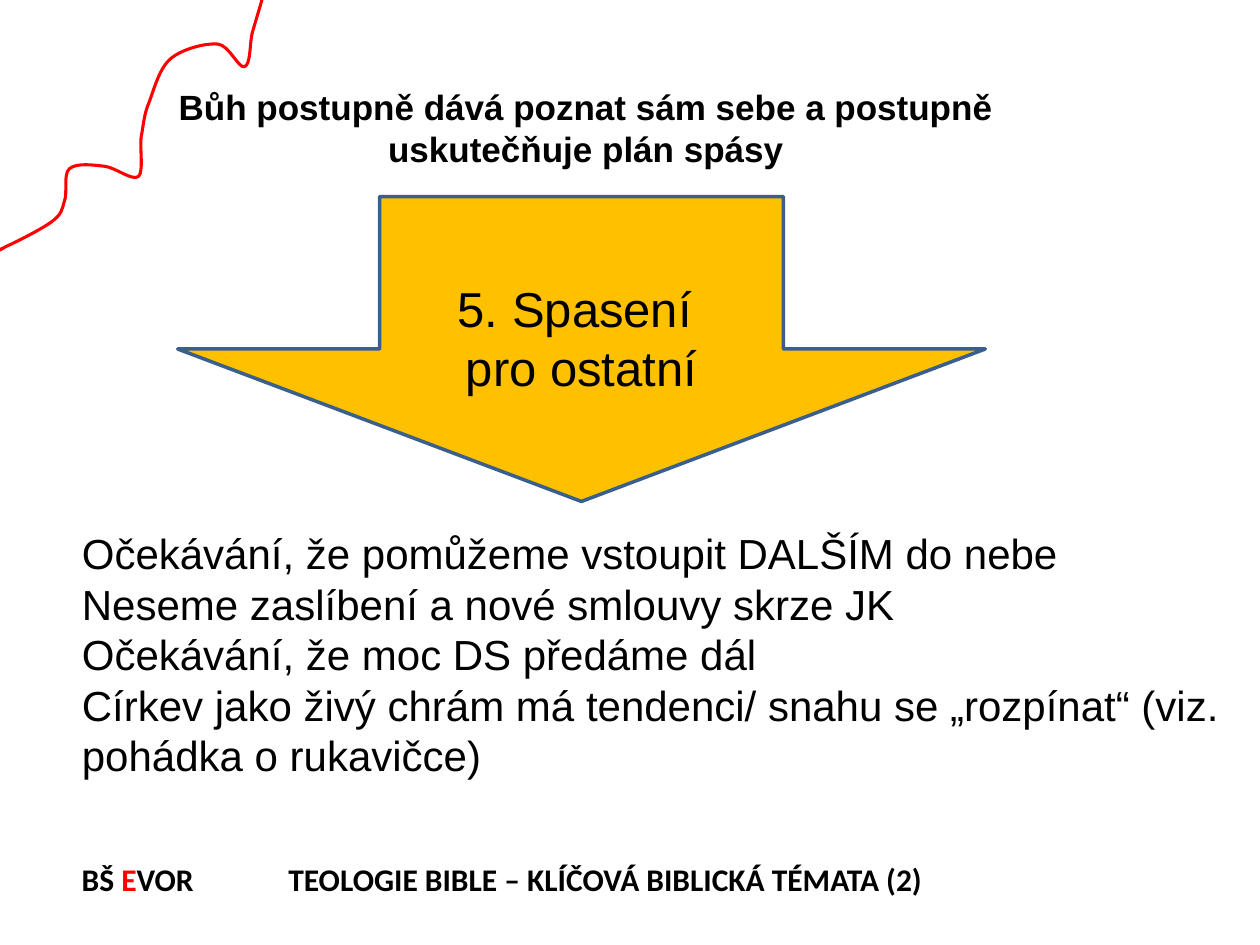
from lxml.etree import SubElement
from pptx import Presentation
from pptx.dml.color import RGBColor
from pptx.enum.shapes import MSO_SHAPE
from pptx.enum.text import MSO_ANCHOR, MSO_AUTO_SIZE, PP_ALIGN
from pptx.oxml.ns import qn
from pptx.util import Inches, Pt

BLACK = RGBColor(0, 0, 0)
RED = RGBColor(255, 0, 0)
GOLD = RGBColor(0xFF, 0xC0, 0x00)
BLUE = RGBColor(0x3A, 0x5F, 0x8C)

TITLE = "Bůh postupně dává poznat sám sebe a postupně uskutečňuje plán spásy"
STEP = "5. Spasení \npro ostatní"
POINTS = "\n".join([
    "Očekávání, že pomůžeme vstoupit DALŠÍM do nebe",
    "Neseme zaslíbení a nové smlouvy skrze JK",
    "Očekávání, že moc DS předáme dál",
    "Církev jako živý chrám má tendenci/ snahu se „rozpínat“ (viz. pohádka o rukavičce)",
])
FOOTER = [
    ("BŠ", BLACK),
    (" E", RED),
    ("VOR\tTEOLOGIE BIBLE – KLÍČOVÁ BIBLICKÁ TÉMATA (2)", BLACK),
]

# Start point, then two control points and an end point for each bend
CURVE = [
    (2.1, -0.08),
    (2.07, 0.04), (2.03, 0.16), (2, 0.27),
    (1.98, 0.37), (1.99, 0.51), (1.94, 0.53),
    (1.89, 0.54), (1.82, 0.36), (1.73, 0.35),
    (1.63, 0.34), (1.44, 0.39), (1.35, 0.47),
    (1.26, 0.55), (1.22, 0.72), (1.18, 0.82),
    (1.14, 0.92), (1.14, 0.99), (1.12, 1.09),
    (1.11, 1.19), (1.14, 1.36), (1.1, 1.4),
    (1.05, 1.44), (0.92, 1.33), (0.83, 1.32),
    (0.74, 1.31), (0.61, 1.29), (0.55, 1.34),
    (0.5, 1.39), (0.54, 1.53), (0.51, 1.6),
    (0.49, 1.67), (0.49, 1.7), (0.41, 1.76),
    (0.33, 1.82), (0.11, 1.93), (0.04, 1.96),
    (-0.02, 2), (0, 1.98), (0.02, 1.97),
]


def place(shape, box):
    shape.left, shape.top, shape.width, shape.height = map(Inches, box)


def style(run, size, face="Arial", color=BLACK, bold=False):
    font = run.font
    font.size, font.name, font.bold = Pt(size), face, bold
    font.color.rgb = color


def write(shape, text, size, align=PP_ALIGN.LEFT, bold=False, wrap=True):
    frame = shape.text_frame
    frame.text = text
    frame.word_wrap = wrap
    frame.auto_size = MSO_AUTO_SIZE.NONE
    frame.vertical_anchor = MSO_ANCHOR.TOP
    for para in frame.paragraphs:
        para.alignment = align
        para.space_before = Pt(0)
        for run in para.runs:
            style(run, size, bold=bold)


def add_title(slide, box):
    title = slide.shapes.title
    place(title, box)
    write(title, TITLE, 20, PP_ALIGN.CENTER, bold=True)


def add_list(slide, box):
    body = slide.placeholders[1]
    place(body, box)
    write(body, POINTS, 24)
    # Plain lines: no bullet and no indent
    for para in body.text_frame.paragraphs:
        props = para._p.get_or_add_pPr()
        props.set("marL", "0")
        props.set("indent", "0")
        SubElement(props, qn("a:buNone"))


def add_arrow(slide, box):
    left, top, width, height = box
    arrow = slide.shapes.add_shape(MSO_SHAPE.DOWN_ARROW, *map(Inches, box))
    arrow.shadow.inherit = False
    arrow.fill.solid()
    arrow.fill.fore_color.rgb = GOLD
    arrow.line.color.rgb = BLUE
    arrow.line.width = Pt(2)
    # Label on the shaft
    wide, high = 2.19, 1.04
    label = slide.shapes.add_textbox(
        Inches(left + (width - wide) / 2), Inches(top + 0.6),
        Inches(wide), Inches(high))
    write(label, STEP, 28, PP_ALIGN.CENTER, wrap=False)


def add_curve(slide):
    start, *rest = [(Inches(x), Inches(y)) for x, y in CURVE]
    build = slide.shapes.build_freeform(*start, scale=1.0)
    build.add_line_segments(rest, close=False)
    curve = build.convert_to_shape()
    curve.shadow.inherit = False
    curve.fill.background()
    curve.line.color.rgb = RED
    curve.line.width = Pt(1.75)
    # Gather each three line points into one Bézier bend
    track = next(curve._element.iter(qn("a:path")))
    lines = track.findall(qn("a:lnTo"))
    for i in range(0, len(lines), 3):
        bend = SubElement(track, qn("a:cubicBezTo"))
        for line in lines[i:i + 3]:
            bend.append(line[0])
            track.remove(line)


def add_footer(slide, box):
    foot = slide.shapes.add_textbox(*map(Inches, box))
    foot.text_frame.word_wrap = True
    para = foot.text_frame.paragraphs[0]
    for text, color in FOOTER:
        run = para.add_run()
        run.text = text
        style(run, 18, "Calibri", color, bold=True)
    # Tab stop for the course name
    tabs = SubElement(para._p.get_or_add_pPr(), qn("a:tabLst"))
    SubElement(tabs, qn("a:tab"), pos=str(Inches(1.64)), algn="l")


def main():
    deck = Presentation()
    deck.slide_width, deck.slide_height = Inches(10), Inches(7.5)
    slide = deck.slides.add_slide(deck.slide_layouts[1])
    add_arrow(slide, (1.41, 1.56, 6.41, 2.42))
    add_title(slide, (0.55, 0.63, 8.2, 0.77))
    add_list(slide, (0.55, 4.14, 9.45, 2.12))
    add_curve(slide)
    add_footer(slide, (0.55, 6.78, 7.27, 0.4))
    deck.save("out.pptx")


if __name__ == "__main__":
    main()
